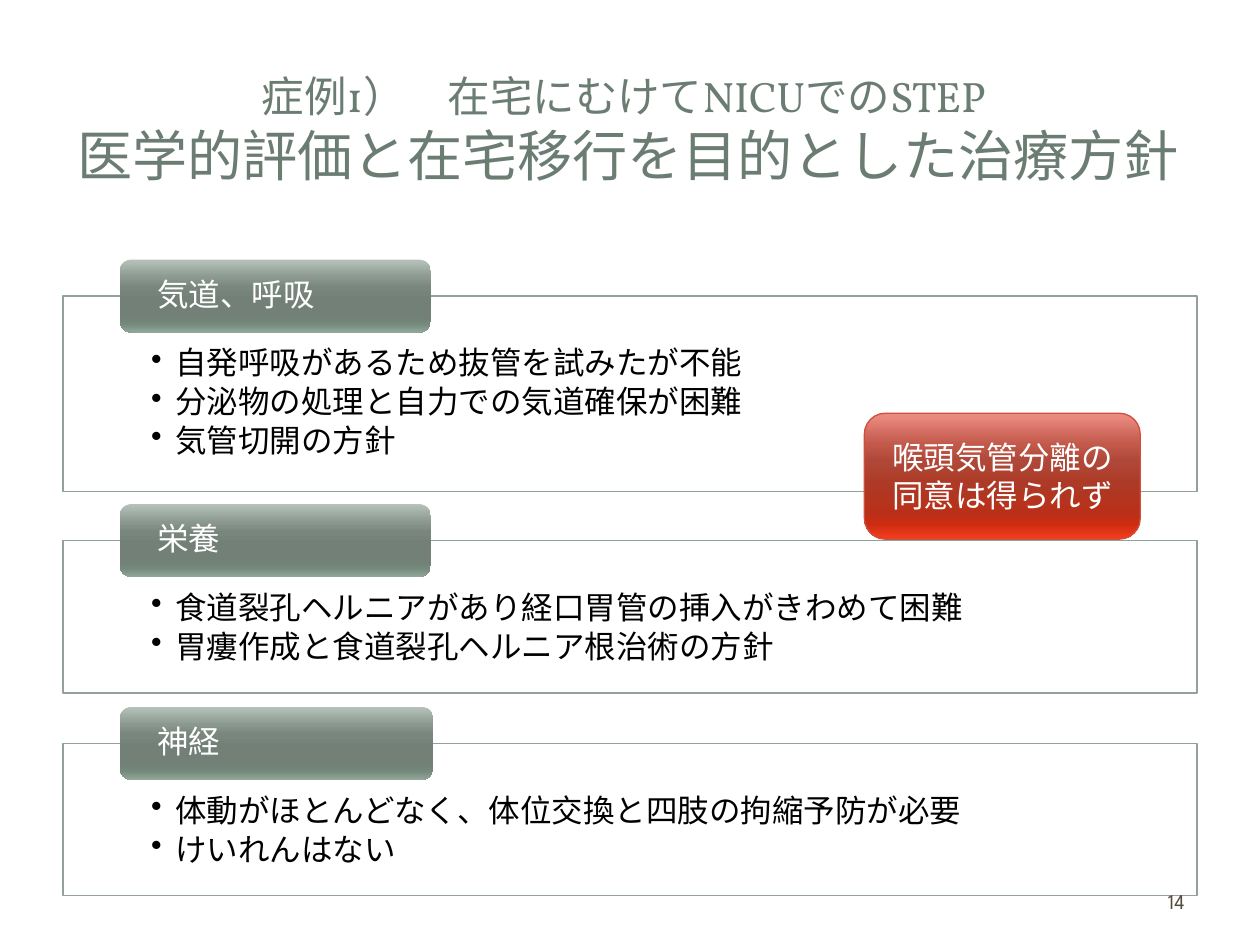
from lxml import etree
from pptx import Presentation
from pptx.dml.color import RGBColor
from pptx.enum.shapes import MSO_SHAPE
from pptx.enum.text import MSO_ANCHOR, MSO_AUTO_SIZE, PP_ALIGN
from pptx.oxml.ns import qn
from pptx.util import Inches, Pt

RECT, ROUND = MSO_SHAPE.RECTANGLE, MSO_SHAPE.ROUNDED_RECTANGLE
TOP, MIDDLE = MSO_ANCHOR.TOP, MSO_ANCHOR.MIDDLE
LEFT, CENTER, RIGHT = PP_ALIGN.LEFT, PP_ALIGN.CENTER, PP_ALIGN.RIGHT
HEAD, BODY = "Vollkorn", "League Spartan"
WHITE, BLACK, SAGE = "FFFFFF", "000000", "93A299"
STOPS = (0, 25, 38, 55, 80, 88, 100)
GREEN = ("B6C3BB", "8B9890", "79867E", "728078", "708176", "75887C", "91A79A")
RED = ("EF8E85", "C1584A", "B04839", "AD3A26", "BA2F18", "CD2C10", "F63D1F")
PARTS = [
    ("気道、呼吸", 2.35, 1.55, 2.47,
     ["自発呼吸があるため抜管を試みたが不能",
      "分泌物の処理と自力での気道確保が困難",
      "気管切開の方針"]),
    ("栄養", 4.29, 1.21, 2.47,
     ["食道裂孔ヘルニアがあり経口胃管の挿入がきわめて困難",
      "胃瘻作成と食道裂孔ヘルニア根治術の方針"]),
    ("神経", 5.9, 1.21, 2.49,
     ["体動がほとんどなく、体位交換と四肢の拘縮予防が必要",
      "けいれんはない"]),
]


def color(code):
    return RGBColor.from_string(code)


def style(run, size, code, font=BODY):
    run.font.size = Pt(size)
    run.font.name = font
    run.font.color.rgb = color(code)


def write(shape, text, code, align=LEFT, anchor=MIDDLE, size=18, pad=(0.1, 0.05, 0.1, 0.05)):
    frame = shape.text_frame
    frame.word_wrap = True
    frame.vertical_anchor = anchor
    frame.margin_left, frame.margin_top, frame.margin_right, frame.margin_bottom = map(Inches, pad)
    frame.text = text
    for para in frame.paragraphs:
        para.alignment = align
        for run in para.runs:
            style(run, size, code)
    return frame


def add_box(slide, kind, box, line=None):
    shape = slide.shapes.add_shape(kind, *map(Inches, box))
    shape.shadow.inherit = False
    if line:
        shape.line.color.rgb = color(line)
        shape.line.width = Pt(0.75)
    else:
        shape.line.fill.background()
    return shape


def shade(shape, codes):
    shape.fill.gradient()
    shape.fill.gradient_angle = 270
    stops = shape._element.spPr.find(qn("a:gradFill")).find(qn("a:gsLst"))
    for old in list(stops):
        stops.remove(old)
    for pos, code in zip(STOPS, codes):
        stop = etree.SubElement(stops, qn("a:gs"), pos=str(pos * 1000))
        etree.SubElement(stop, qn("a:srgbClr"), val=code)


def add_bullet(para):
    props = para._p.get_or_add_pPr()
    props.set("marL", str(Inches(0.19)))
    props.set("indent", str(-Inches(0.19)))
    etree.SubElement(props, qn("a:buChar"), char="•")


def add_title(slide, box):
    title = slide.shapes.title
    title.left, title.top, title.width, title.height = map(Inches, box)
    frame = title.text_frame
    frame.text = "症例1）\u3000在宅にむけてNICUでのSTEP \v医学的評価と在宅移行を目的とした治療方針"
    frame.auto_size = MSO_AUTO_SIZE.NONE
    frame.vertical_anchor = MIDDLE
    para = frame.paragraphs[0]
    para.alignment = CENTER
    for run, size in zip(para.runs, (24.3, 31.5)):
        style(run, size, "6B7D72", HEAD)


def add_part(slide, box, name, wide, items):
    left, top = box[:2]
    panel = add_box(slide, RECT, box, SAGE)
    panel.fill.solid()
    panel.fill.fore_color.rgb = color(WHITE)
    frame = write(panel, "\n".join(items), BLACK, anchor=TOP, pad=(0.7, 0.41, 0.7, 0.14))
    for para in frame.paragraphs:
        para.line_spacing = 0.9
        para.space_after = Pt(2.7)
        add_bullet(para)
    tab = add_box(slide, ROUND, (left + 0.45, top - 0.29, wide, 0.58))
    shade(tab, GREEN)
    frame = write(tab, name, WHITE, pad=(0.27, 0.03, 0.27, 0.03))
    frame.paragraphs[0].line_spacing = 0.9


def add_note(slide, box):
    note = add_box(slide, ROUND, box, "CE503A")
    shade(note, RED)
    write(note, "喉頭気管分離の同意は得られず", WHITE, CENTER)


def add_number(slide, box):
    write(slide.shapes.add_textbox(*map(Inches, box)), "14", "564B3C", RIGHT, size=12)


def main():
    deck = Presentation()
    deck.slide_width, deck.slide_height = Inches(10), Inches(7.5)
    slide = deck.slides.add_slide(deck.slide_layouts[5])
    add_title(slide, (0.47, 0.45, 9.03, 1.14))
    for name, top, high, wide, items in PARTS:
        add_part(slide, (0.5, top, 9, high), name, wide, items)
    add_note(slide, (6.86, 3.28, 2.19, 1))
    add_number(slide, (7.17, 6.95, 2.33, 0.4))
    deck.save("out.pptx")


if __name__ == "__main__":
    main()
